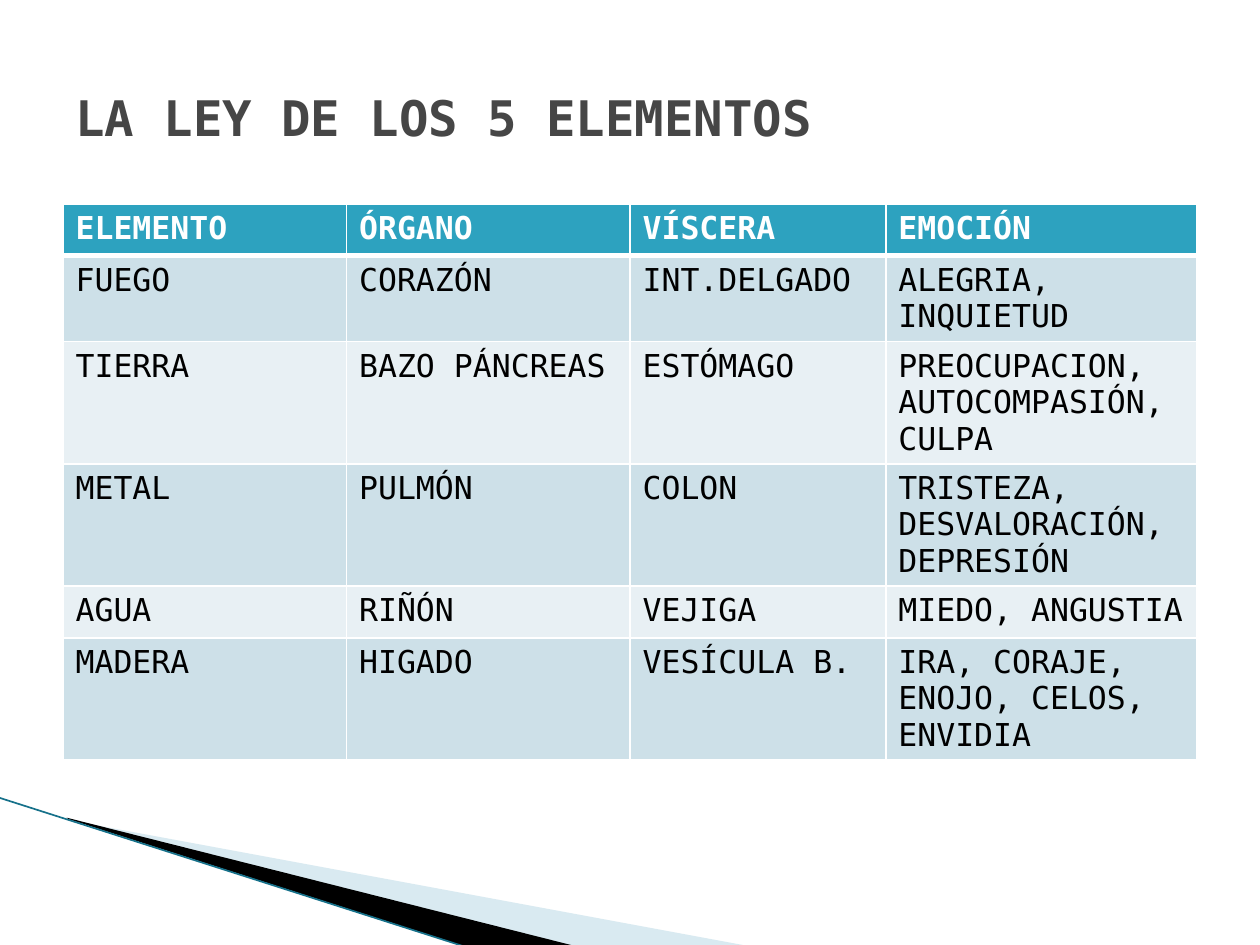
from lxml.etree import SubElement
from pptx import Presentation
from pptx.dml.color import RGBColor
from pptx.enum.shapes import MSO_CONNECTOR
from pptx.enum.text import MSO_ANCHOR
from pptx.oxml.ns import qn
from pptx.util import Inches, Pt

FONT = "DejaVu Sans Mono"
TITLE = "LA LEY DE LOS 5 ELEMENTOS"
ROWS = [
    ("ELEMENTO", "ÓRGANO", "VÍSCERA", "EMOCIÓN"),
    ("FUEGO", "CORAZÓN", "INT.DELGADO", "ALEGRIA, INQUIETUD"),
    ("TIERRA", "BAZO PÁNCREAS", "ESTÓMAGO", "PREOCUPACION, AUTOCOMPASIÓN, CULPA"),
    ("METAL", "PULMÓN", "COLON", "TRISTEZA, DESVALORACIÓN, DEPRESIÓN"),
    ("AGUA", "RIÑÓN", "VEJIGA", "MIEDO, ANGUSTIA"),
    ("MADERA", "HIGADO", "VESÍCULA B.", "IRA, CORAJE, ENOJO, CELOS, ENVIDIA"),
]
COL_WIDTHS = [2.25, 2.25, 2.03, 2.47]
ROW_HEIGHT = 0.41
HEADER_FILL = "2DA2BF"
BAND_FILLS = ["CDE0E8", "E8F0F4"]
WEDGES = [
    ([(0.55, 6.51), (5.95, 7.51), (4.56, 7.51), (0.55, 6.5)], "A0CBDC", 40),
    ([(0.53, 6.49), (4.57, 7.51), (3.72, 7.52), (0.54, 6.5)], "000000", 100),
]
EDGE = (-0.01, 6.33, 3.71, 7.52)


def rgb(color):
    return RGBColor.from_string(color)


def style(p, size, color, bold):
    font = p.runs[0].font
    font.name, font.size, font.bold = FONT, Pt(size), bold
    font.color.rgb = rgb(color)


def add_wedge(s, points, color, opacity):
    pts = [(Inches(x), Inches(y)) for x, y in points]
    builder = s.shapes.build_freeform(*pts[0])
    builder.add_line_segments(pts[1:], close=True)
    sp = builder.convert_to_shape()
    sp.shadow.inherit = False
    sp.line.fill.background()
    sp.fill.solid()
    sp.fill.fore_color.rgb = rgb(color)
    if opacity < 100:
        clr = sp.fill._xPr.find(qn("a:solidFill"))[0]
        SubElement(clr, qn("a:alpha"), val=str(opacity * 1000))


def add_edge(s):
    line = s.shapes.add_connector(MSO_CONNECTOR.STRAIGHT, *map(Inches, EDGE))
    line.line.color.rgb = rgb("16718A")
    line.line.width = Pt(0.95)
    SubElement(line._element.spPr, qn("a:effectLst"))


def set_borders(cell, bottom):
    tcPr = cell._tc.get_or_add_tcPr()
    widths = {"lnL": 1, "lnR": 1, "lnT": 1, "lnB": bottom}
    for i, (tag, width) in enumerate(widths.items()):
        ln = tcPr.makeelement(qn("a:" + tag), {"w": str(Pt(width))})
        fill = SubElement(ln, qn("a:solidFill"))
        SubElement(fill, qn("a:srgbClr"), val="FFFFFF")
        tcPr.insert(i, ln)


def add_elements_table(s):
    frame = s.shapes.add_table(
        len(ROWS), len(COL_WIDTHS), Inches(0.5), Inches(1.62),
        Inches(sum(COL_WIDTHS)), Inches(ROW_HEIGHT * len(ROWS)))
    table = frame.table
    for col, width in zip(table.columns, COL_WIDTHS):
        col.width = Inches(width)
    for r, row in enumerate(ROWS):
        header = r == 0
        table.rows[r].height = Inches(ROW_HEIGHT)
        for c, text in enumerate(row):
            cell = table.cell(r, c)
            cell.text_frame.text = text
            style(cell.text_frame.paragraphs[0], 18,
                  "FFFFFF" if header else "000000", header)
            cell.fill.solid()
            cell.fill.fore_color.rgb = rgb(
                HEADER_FILL if header else BAND_FILLS[(r - 1) % 2])
            set_borders(cell, 3 if header else 1)


def add_title(s):
    sp = s.shapes.add_textbox(Inches(0.5), Inches(0.3), Inches(9), Inches(1.25))
    tf = sp.text_frame
    tf.word_wrap = True
    tf.vertical_anchor = MSO_ANCHOR.MIDDLE
    tf.text = TITLE
    style(tf.paragraphs[0], 28, "464646", True)


def main():
    prs = Presentation()
    prs.slide_width, prs.slide_height = Inches(10), Inches(7.5)
    s = prs.slides.add_slide(prs.slide_layouts[6])
    for wedge in WEDGES:
        add_wedge(s, *wedge)
    add_edge(s)
    add_elements_table(s)
    add_title(s)
    prs.save("out.pptx")


if __name__ == "__main__":
    main()
